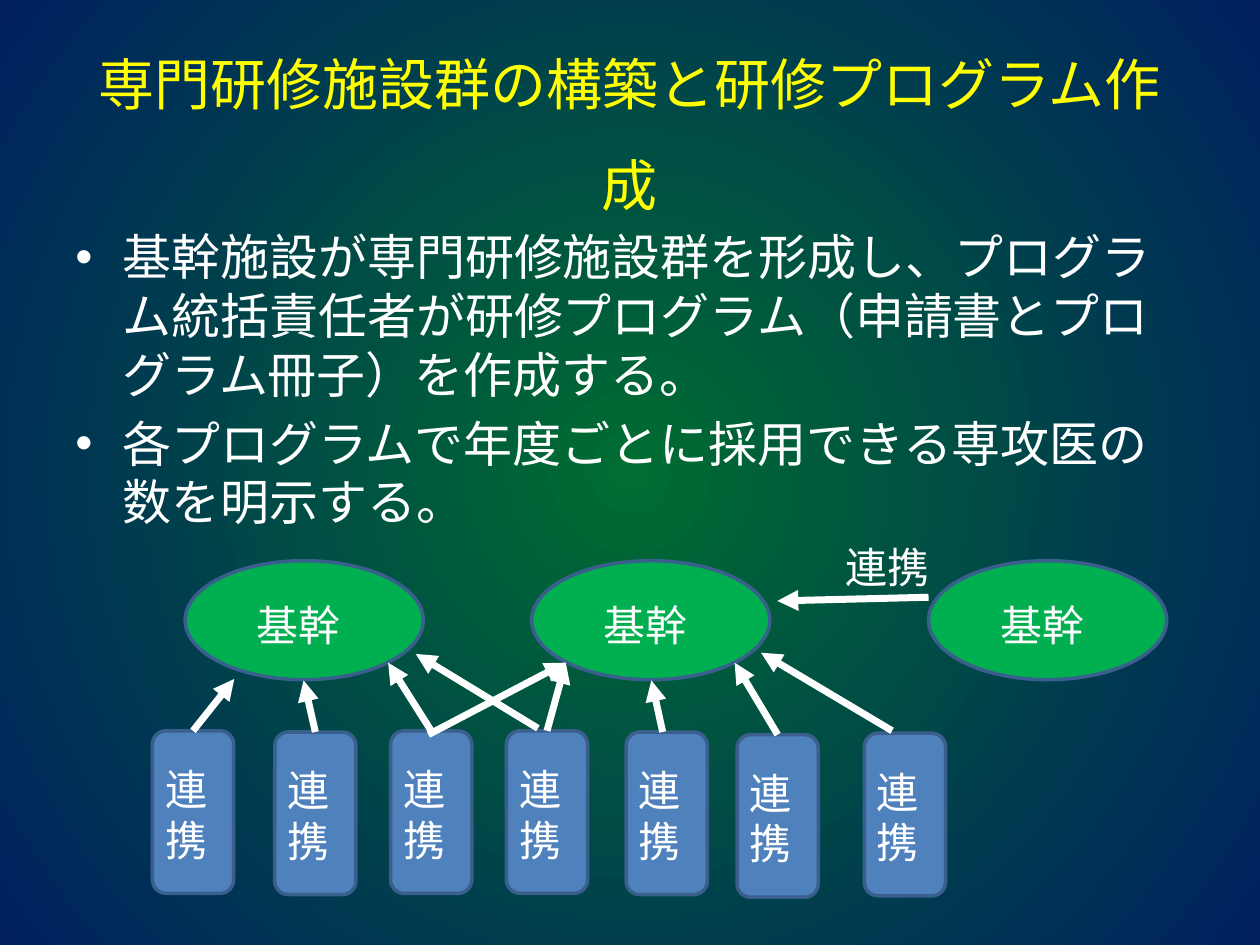
from lxml.etree import SubElement
from pptx import Presentation
from pptx.dml.color import RGBColor
from pptx.enum.shapes import MSO_CONNECTOR as CXN, MSO_SHAPE as SHAPE
from pptx.enum.text import MSO_ANCHOR as ANCHOR, PP_ALIGN as ALIGN
from pptx.oxml.ns import qn
from pptx.util import Pt

WHITE = RGBColor(0xFF, 0xFF, 0xFF)
YELLOW = RGBColor(0xFF, 0xFF, 0x00)
GREEN = RGBColor(0x00, 0xB0, 0x50)
BLUE = RGBColor(0x4F, 0x81, 0xBD)
OUTLINE = RGBColor(0x3A, 0x5F, 0x8C)
BG_CENTRE = RGBColor(0x00, 0x6D, 0x31)
BG_EDGE = RGBColor(0x00, 0x20, 0x60)

TITLE = "専門研修施設群の構築と研修プログラム作成"
BULLETS = [
    "基幹施設が専門研修施設群を形成し、プログラム統括責任者が研修プログラム（申請書とプログラム冊子）を作成する。",
    "各プログラムで年度ごとに採用できる専攻医の数を明示する。",
]
CORE, PARTNER = "基幹", "連携"
CORE_LEFTS = [105.8, 303.8, 530.6]
PARTNER_SPOTS = [(87.1, 417.6), (157, 418.3), (223.2, 417.6), (289.4, 417.6),
                 (357.8, 418.3), (421.2, 419.8), (493.9, 419)]
# Partner index, arrow tip
JOINED_ARROWS = [(0, (133.9, 388)), (1, (173.5, 388.8)), (2, (221.8, 378.7)),
                 (3, (323.3, 378.7)), (5, (419.8, 378.7))]
# Arrow start, arrow tip
FREE_ARROWS = [((378.7, 418.3), (372.2, 388.8)), ((509.8, 417.6), (434.9, 373)),
               ((244.8, 419.8), (323.3, 378.7)), ((307.4, 416.2), (237.6, 373.7)),
               ((530.6, 341.3), (444.2, 343.4))]


class SlideBuilder:
    font = "Calibri"

    def __init__(self, slide):
        self.s = slide

    def background(self):
        """Fill the slide with a circular gradient spreading from its centre."""
        fill = self.s.background.fill
        fill.gradient()
        for stop, color, position in zip(fill.gradient_stops, (BG_CENTRE, BG_EDGE), (0, 1)):
            stop.color.rgb = color
            stop.position = position
        lin = next(self.s.element.iter(qn("a:lin")))
        grad = lin.getparent()
        grad.remove(lin)
        circle = SubElement(grad, qn("a:path"), {"path": "circle"})
        SubElement(circle, qn("a:fillToRect"), dict.fromkeys("ltrb", "50000"))

    def set_text(self, tf, lines, size=24, color=WHITE, frame=None, para=None):
        """Set lines as paragraphs, with dicts of frame and paragraph values."""
        for name, value in {"word_wrap": True, **(frame or {})}.items():
            setattr(tf, name, value)
        for i, line in enumerate(lines):
            p = tf.add_paragraph() if i else tf.paragraphs[0]
            for name, value in {"alignment": ALIGN.LEFT, **(para or {})}.items():
                setattr(p, name, value)
            r = p.add_run()
            r.text = line
            r.font.name, r.font.size, r.font.color.rgb = self.font, Pt(size), color

    def text(self, box, lines, **style):
        tf = self.s.shapes.add_textbox(*map(Pt, box)).text_frame
        self.set_text(tf, lines, **style)
        return tf

    def bullets(self, box, lines, size):
        tf = self.text(box, lines, size=size, para={"space_before": Pt(size * 0.2)})
        for p in tf.paragraphs:
            pPr = p._p.get_or_add_pPr()
            pPr.set("marL", str(Pt(27)))
            pPr.set("indent", str(-Pt(27)))
            SubElement(pPr, qn("a:buFont"), typeface="Arial")
            SubElement(pPr, qn("a:buChar"), char="•")

    def node(self, kind, box, label, fill, margins):
        """Add an outlined shape; margins are left, top, right, bottom."""
        sp = self.s.shapes.add_shape(kind, *map(Pt, box))
        sp.shadow.inherit = False
        sp.fill.solid()
        sp.fill.fore_color.rgb = fill
        sp.line.color.rgb, sp.line.width = OUTLINE, Pt(2)
        frame = {f"margin_{side}": Pt(m)
                 for side, m in zip(("left", "top", "right", "bottom"), margins)}
        self.set_text(sp.text_frame, [label], frame={**frame, "vertical_anchor": ANCHOR.TOP})
        return sp

    def arrow(self, start, tip, source=None):
        cxn = self.s.shapes.add_connector(CXN.STRAIGHT, *map(Pt, (*start, *tip)))
        cxn.line.color.rgb, cxn.line.width = WHITE, Pt(4)
        spPr = cxn._element.spPr
        SubElement(spPr.find(qn("a:ln")), qn("a:tailEnd"), type="triangle")
        SubElement(spPr, qn("a:effectLst"))
        if source is not None:
            cxn.begin_connect(source, 0)


def main():
    prs = Presentation()
    prs.slide_width, prs.slide_height = Pt(720), Pt(540)
    b = SlideBuilder(prs.slides.add_slide(prs.slide_layouts[6]))
    b.background()
    b.text((36, 21.6, 648, 90), [TITLE], size=32, color=YELLOW,
           frame={"vertical_anchor": ANCHOR.MIDDLE},
           para={"alignment": ALIGN.CENTER, "line_spacing": 1.5})
    b.bullets((36, 126, 648, 356.4), BULLETS, 28)

    for left in CORE_LEFTS:
        b.node(SHAPE.OVAL, (left, 320.4, 136.1, 68), CORE, GREEN, (21, 12.4, 0, 0))
    partners = [b.node(SHAPE.ROUNDED_RECTANGLE, (left, top, 46.4, 92.9), PARTNER, BLUE,
                       (5, 16.5, 14.4, 0))
                for left, top in PARTNER_SPOTS]

    for i, tip in JOINED_ARROWS:
        b.arrow((0, 0), tip, partners[i])
    for start, tip in FREE_ARROWS:
        b.arrow(start, tip)
    b.text((475.9, 306, 68.4, 36), [PARTNER])
    prs.save("out.pptx")


if __name__ == "__main__":
    main()
